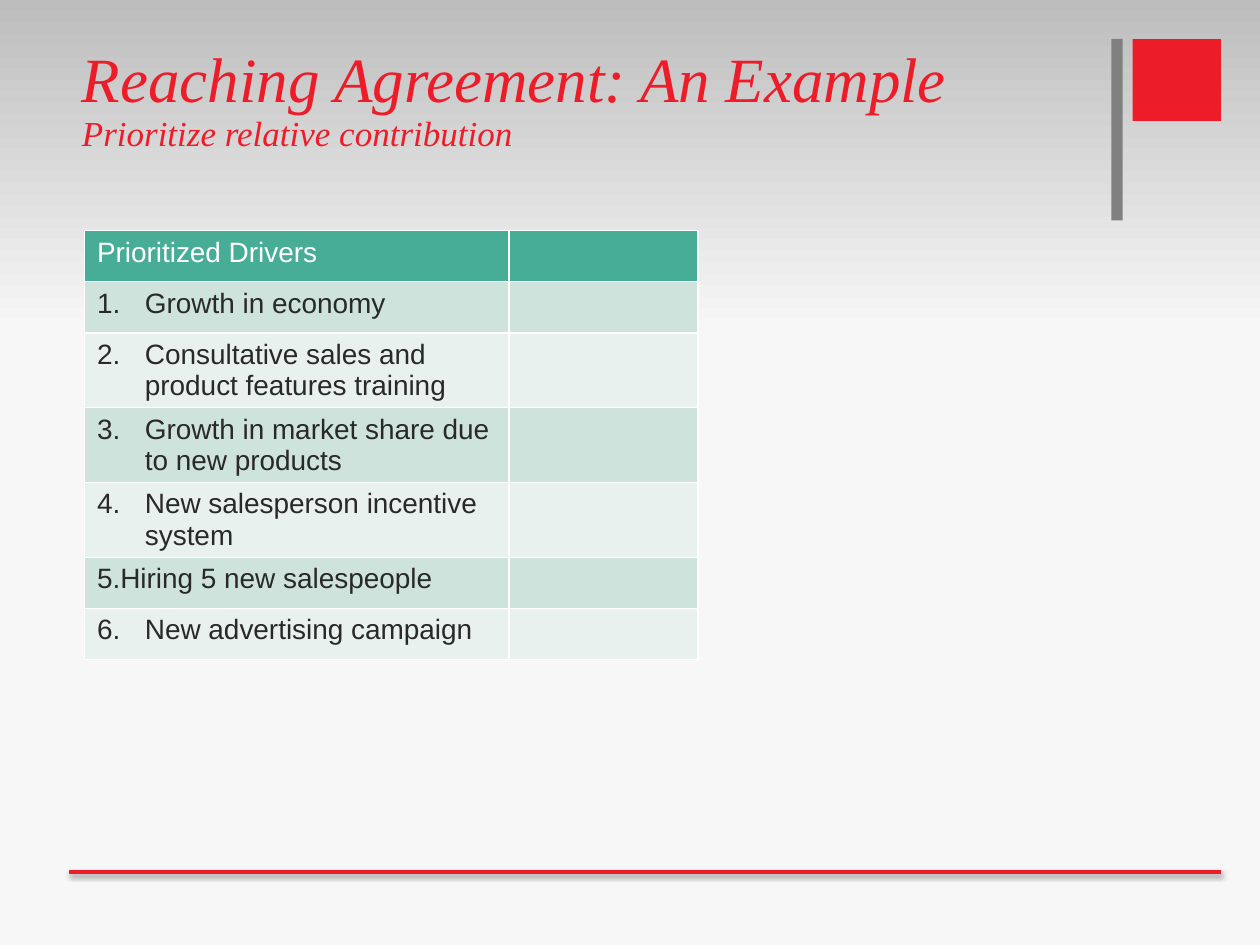
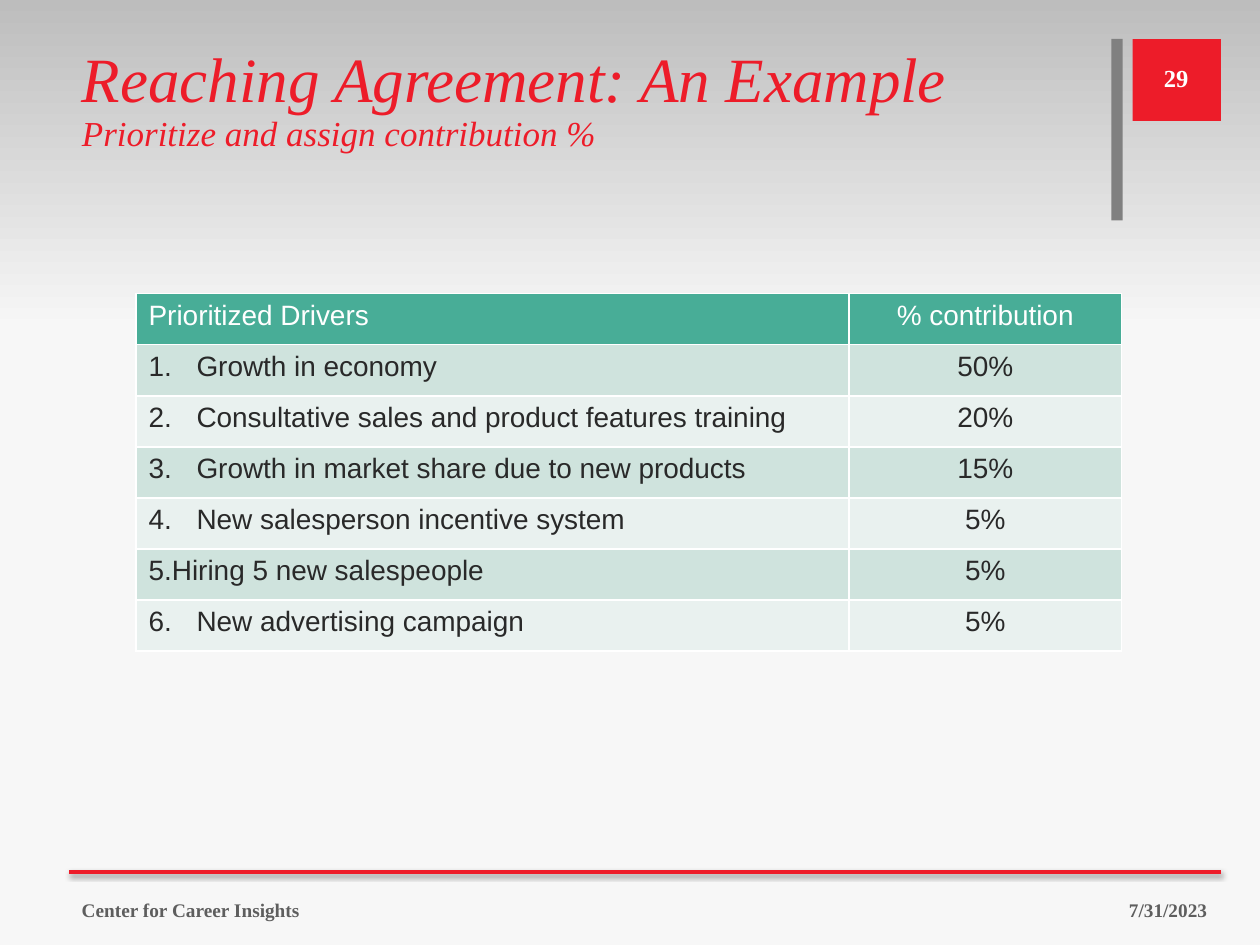
import lxml.etree
import pptx
import pptx.dml.color
import pptx.enum.shapes
import pptx.enum.text
import pptx.oxml.ns
import pptx.util

Inches, Pt = pptx.util.Inches, pptx.util.Pt
RGBColor = pptx.dml.color.RGBColor
MSO_ANCHOR = pptx.enum.text.MSO_ANCHOR
PP_ALIGN = pptx.enum.text.PP_ALIGN
qn = pptx.oxml.ns.qn

RED = RGBColor(0xED, 0x1C, 0x29)
GRAY = RGBColor(0x80, 0x80, 0x80)
FOOTER_GRAY = RGBColor(0x5E, 0x5E, 0x5E)
WHITE = RGBColor(0xFF, 0xFF, 0xFF)
INK = RGBColor(0x29, 0x29, 0x29)
TEAL = RGBColor(0x48, 0xAD, 0x97)
BANDS = (RGBColor(0xCF, 0xE3, 0xDD), RGBColor(0xE9, 0xF1, 0xEF))
SKY_TOP = RGBColor(0xBD, 0xBD, 0xBD)
SKY_BOTTOM = RGBColor(0xF7, 0xF7, 0xF7)
SERIF, SANS = "Times New Roman", "Arial"

HEADING = "Reaching Agreement: An Example"
DRIVERS = [
    "Growth in economy",
    "Consultative sales and product features training",
    "Growth in market share due to new products",
    "New salesperson incentive system",
    "Hiring 5 new salespeople",
    "New advertising campaign",
]
HANGING = 0.38
MARGINS = {5: 0.12}  # the fifth driver sits tight against its number


def sub(parent, tag, **attrs):
    """Append a DrawingML child with the given attributes."""
    return lxml.etree.SubElement(parent, qn(tag), {k: str(v) for k, v in attrs.items()})


def set_font(p, name, size, color, bold=False):
    p.font.name = name
    p.font.size = Pt(size)
    p.font.color.rgb = color
    p.font.bold = bold


def add_background(s):
    fill = s.background.fill
    fill.gradient()
    fill.gradient_angle = 270
    for stop, color, position in zip(fill.gradient_stops, (SKY_TOP, SKY_BOTTOM), (0, 0.35)):
        stop.color.rgb = color
        stop.position = position


def add_block(s, box, color):
    sp = s.shapes.add_shape(pptx.enum.shapes.MSO_SHAPE.RECTANGLE, *map(Inches, box))
    sp.shadow.inherit = False
    sp.fill.solid()
    sp.fill.fore_color.rgb = color
    sp.line.fill.background()


def add_footer_rule(s, left, right, y):
    """Red rule with a soft shadow below it."""
    line = s.shapes.add_connector(pptx.enum.shapes.MSO_CONNECTOR.STRAIGHT,
                                  *map(Inches, (left, y, right, y)))
    line.line.color.rgb = RED
    line.line.width = Pt(2)
    effects = sub(line._element.spPr, "a:effectLst")
    shadow = sub(effects, "a:outerShdw", blurRad=Pt(3.1), dist=Pt(1.6),
                 dir=90 * 60000, rotWithShape=0)
    sub(sub(shadow, "a:srgbClr", val="000000"), "a:alpha", val=38000)


def add_title(s, box, subtitle):
    sp = s.shapes.title
    sp.left, sp.top, sp.width, sp.height = map(Inches, box)
    tf = sp.text_frame
    tf.auto_size = pptx.enum.text.MSO_AUTO_SIZE.NONE
    tf.vertical_anchor = MSO_ANCHOR.TOP
    p = tf.paragraphs[0]
    p.alignment = PP_ALIGN.LEFT
    p.line_spacing = 0.9
    set_font(p, SERIF, 36, RED)
    p.font.italic = True
    r = p.add_run()
    r.text = HEADING
    p.add_line_break()
    r = p.add_run()
    r.text = subtitle
    r.font.size = Pt(20)


def add_label(s, box, text, size, color, align):
    tf = s.shapes.add_textbox(*map(Inches, box)).text_frame
    tf.word_wrap = True
    tf.vertical_anchor = MSO_ANCHOR.MIDDLE
    p = tf.paragraphs[0]
    p.text = text
    p.alignment = align
    set_font(p, SERIF, size, color, bold=True)


def number_paragraph(p, number):
    pPr = p._p.get_or_add_pPr()
    pPr.set("marL", str(Inches(MARGINS.get(number, HANGING))))
    pPr.set("indent", str(-Inches(HANGING)))
    sub(pPr, "a:buFont", typeface="+mj-lt")
    sub(pPr, "a:buAutoNum", type="arabicPeriod", startAt=number)


def style_cell(cell, fill):
    """White 1 pt borders and a solid fill."""
    tcPr = cell._tc.get_or_add_tcPr()
    for side in "LRTB":
        ln = sub(tcPr, f"a:ln{side}", w=Pt(1))
        sub(sub(ln, "a:solidFill"), "a:srgbClr", val=WHITE)
    cell.fill.solid()
    cell.fill.fore_color.rgb = fill


def add_driver_table(s, left, top, widths, value_header="", values=()):
    rows = [("Prioritized Drivers", value_header)]
    rows += [(d, values[i] if values else "") for i, d in enumerate(DRIVERS)]
    table = s.shapes.add_table(len(rows), 2, Inches(left), Inches(top),
                               Inches(sum(widths)), Inches(2.84)).table
    for column, width in zip(table.columns, widths):
        column.width = Inches(width)
    for i, row in enumerate(rows):
        for j, text in enumerate(row):
            cell = table.cell(i, j)
            style_cell(cell, BANDS[(i - 1) % 2] if i else TEAL)
            p = cell.text_frame.paragraphs[0]
            p.text = text
            if j:
                p.alignment = PP_ALIGN.CENTER
            elif i:
                number_paragraph(p, i)
            set_font(p, SANS, 16, INK if i else WHITE)


def add_base_slide(prs, subtitle):
    """Slide with the shared background, bands, rule and title."""
    s = prs.slides.add_slide(prs.slide_layouts[5])
    add_background(s)
    add_block(s, (8.99, 0.31, 0.7, 0.65), RED)
    add_block(s, (8.82, 0.31, 0.09, 1.44), GRAY)
    add_footer_rule(s, 0.55, 9.69, 6.92)
    add_title(s, (0.55, 0.33, 8.26, 1.44), subtitle)
    return s


def add_footer(s, number, date):
    add_label(s, (0.55, 7.02, 6.62, 0.4), "Center for Career Insights", 11,
              FOOTER_GRAY, PP_ALIGN.LEFT)
    add_label(s, (9, 0.42, 0.67, 0.4), number, 14, WHITE, PP_ALIGN.CENTER)
    add_label(s, (7.35, 7.02, 2.33, 0.4), date, 11, FOOTER_GRAY, PP_ALIGN.RIGHT)


def main():
    prs = pptx.Presentation()
    prs.slide_width, prs.slide_height = Inches(10), Inches(7.5)

    s = add_base_slide(prs, "Prioritize relative contribution")
    add_driver_table(s, 0.67, 1.83, (3.37, 1.5))

    s = add_base_slide(prs, "Prioritize and assign contribution %")
    add_driver_table(s, 1.08, 2.33, (5.66, 2.16), "% contribution",
                     ("50%", "20%", "15%", "5%", "5%", "5%"))
    add_footer(s, "29", "7/31/2023")

    prs.save("out.pptx")


if __name__ == "__main__":
    main()
